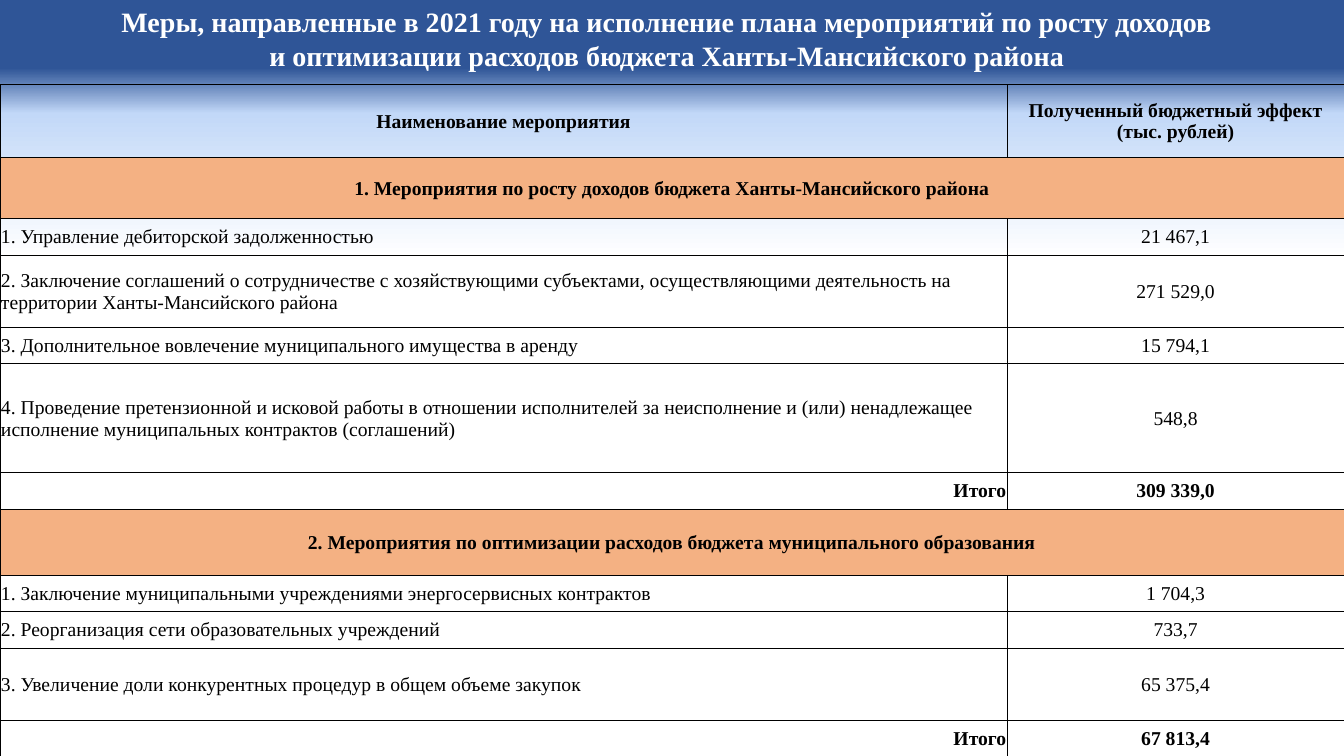
from copy import deepcopy

from lxml import etree
from pptx import Presentation
from pptx.dml.color import RGBColor
from pptx.enum.text import MSO_ANCHOR, PP_ALIGN as Align
from pptx.oxml.ns import qn
from pptx.util import Inches, Pt

FONT = "Times New Roman"
WHITE = RGBColor(0xFF, 0xFF, 0xFF)
BLACK = RGBColor(0, 0, 0)
ORANGE = RGBColor(0xF4, 0xB1, 0x83)
BACKDROP = [
    (0.09, RGBColor(0x2F, 0x55, 0x97)),
    (0.15, RGBColor(0xC2, 0xD8, 0xF8)),
    (0.34, WHITE),
]

TITLE = [
    "Меры, направленные в 2021 году на исполнение плана мероприятий по росту доходов",
    "и оптимизации расходов бюджета Ханты-Мансийского района",
]
COLUMN_WIDTHS = [9.99, 3.34]
# Row kind, height, measure, budget effect
ROWS = [
    ("header", 0.72, "Наименование мероприятия", "Полученный бюджетный эффект (тыс. рублей)"),
    ("section", 0.61, "1. Мероприятия по росту доходов бюджета Ханты-Мансийского района", ""),
    ("measure", 0.36, "1. Управление дебиторской задолженностью", "21 467,1"),
    ("measure", 0.72, "2. Заключение соглашений о сотрудничестве с хозяйствующими субъектами, "
     "осуществляющими деятельность на территории Ханты-Мансийского района", "271 529,0"),
    ("measure", 0.36, "3. Дополнительное вовлечение муниципального имущества в аренду", "15 794,1"),
    ("measure", 1.08, "4. Проведение претензионной и исковой работы в отношении исполнителей "
     "за неисполнение и (или) ненадлежащее исполнение муниципальных контрактов (соглашений)", "548,8"),
    ("total", 0.36, "Итого", "309 339,0"),
    ("section", 0.66, "2. Мероприятия по оптимизации расходов бюджета муниципального образования", ""),
    ("measure", 0.36, "1. Заключение муниципальными учреждениями энергосервисных контрактов", "1 704,3"),
    ("measure", 0.36, "2. Реорганизация сети образовательных учреждений", "733,7"),
    ("measure", 0.72, "3. Увеличение доли конкурентных процедур в общем объеме закупок", "65 375,4"),
    ("total", 0.36, "Итого", "67 813,4"),
]
NAME_ALIGN = {
    "header": Align.CENTER,
    "section": Align.CENTER,
    "measure": Align.LEFT,
    "total": Align.RIGHT,
}


def paint_background(page):
    fill = page.background.fill
    fill.gradient()
    fill.gradient_angle = 270
    stop_list = page.element.find(".//" + qn("a:gsLst"))
    stop_list.append(deepcopy(stop_list[-1]))
    for stop, (position, color) in zip(fill.gradient_stops, BACKDROP):
        stop.position = position
        stop.color.rgb = color


def format_text(frame, size, color, bold, align):
    for para in frame.paragraphs:
        para.alignment = align
        for span in para.runs:
            span.font.name = FONT
            span.font.size = Pt(size)
            span.font.bold = bold
            span.font.color.rgb = color


def add_borders(cell):
    """Thin black line on all four sides, placed before the cell's fill."""
    properties = cell._tc.get_or_add_tcPr()
    for place, side in enumerate(("a:lnL", "a:lnR", "a:lnT", "a:lnB")):
        line = etree.Element(qn(side), w=str(Pt(0.5)))
        solid = etree.SubElement(line, qn("a:solidFill"))
        etree.SubElement(solid, qn("a:srgbClr"), val=str(BLACK))
        properties.insert(place, line)


def add_title(page):
    box = page.shapes.add_textbox(Inches(0.05), 0, Inches(13.23), Inches(0.77))
    frame = box.text_frame
    frame.word_wrap = True
    frame.margin_right = Inches(0.2)
    frame.text = "\n".join(TITLE)
    format_text(frame, 20, WHITE, True, Align.CENTER)


def add_measures_table(page):
    table = page.shapes.add_table(
        len(ROWS), len(COLUMN_WIDTHS), 0, Inches(0.84),
        Inches(sum(COLUMN_WIDTHS)), Inches(sum(row[1] for row in ROWS)),
    ).table
    table.first_row = table.horz_banding = False
    for column, width in zip(table.columns, COLUMN_WIDTHS):
        column.width = Inches(width)

    for index, (kind, height, *texts) in enumerate(ROWS):
        table.rows[index].height = Inches(height)
        for column, text in enumerate(texts):
            cell = table.cell(index, column)
            cell.text = text
            cell.vertical_anchor = MSO_ANCHOR.MIDDLE
            cell.margin_left = cell.margin_top = cell.margin_right = Inches(0.01)
            cell.margin_bottom = 0
            if kind == "section":
                cell.fill.solid()
                cell.fill.fore_color.rgb = ORANGE
            else:
                cell.fill.background()
            add_borders(cell)
            align = NAME_ALIGN[kind] if column == 0 else Align.CENTER
            format_text(cell.text_frame, 14, BLACK, kind != "measure", align)
        if kind == "section":
            table.cell(index, 0).merge(table.cell(index, 1))


def main():
    deck = Presentation()
    deck.slide_width = Inches(13.33)
    deck.slide_height = Inches(7.5)
    page = deck.slides.add_slide(deck.slide_layouts[6])
    paint_background(page)
    add_title(page)
    add_measures_table(page)
    deck.save("out.pptx")


if __name__ == "__main__":
    main()
